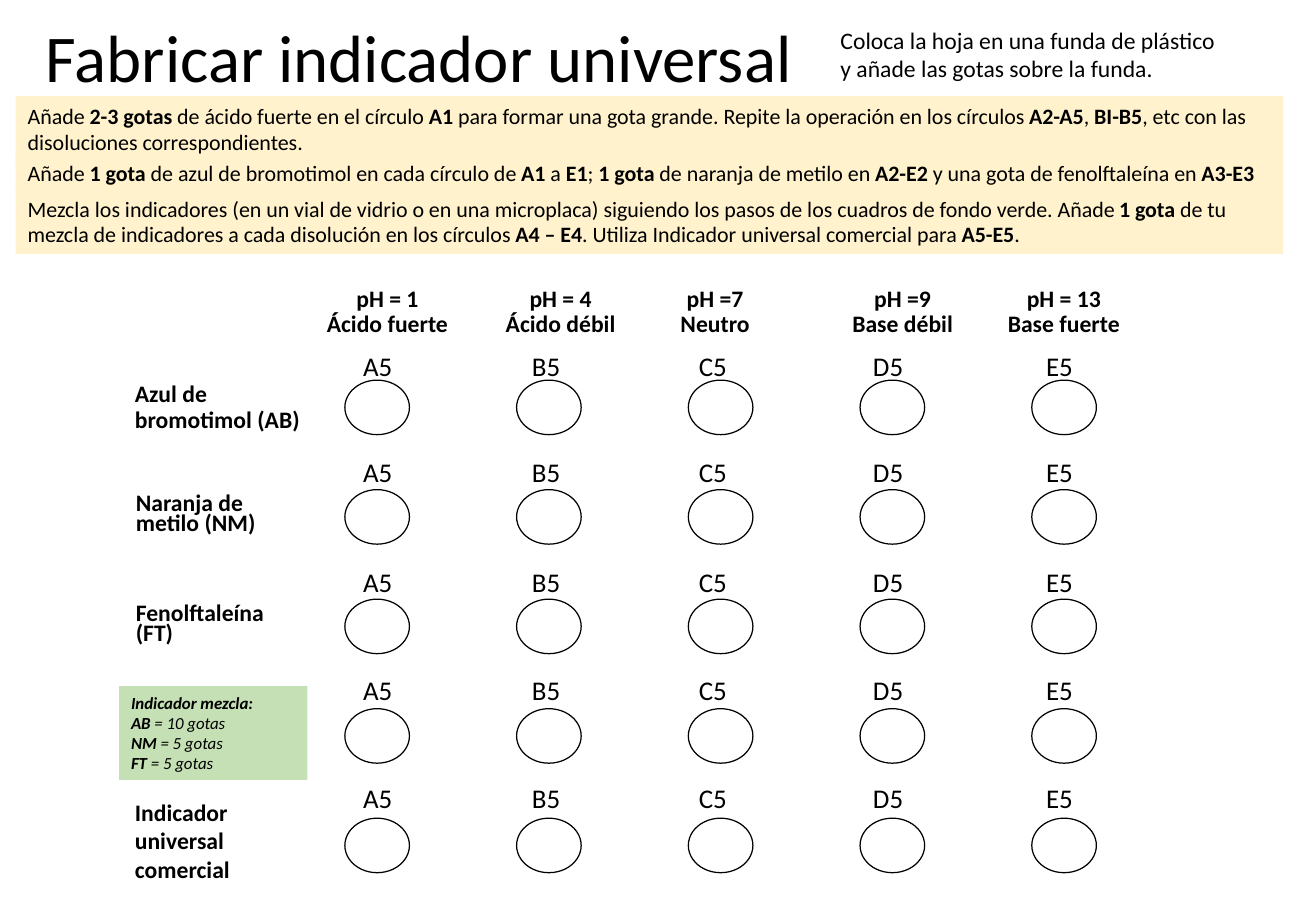
from dataclasses import dataclass
from typing import Optional, Union

from lxml import etree
from pptx import Presentation
from pptx import util as u
from pptx.dml.color import RGBColor
from pptx.enum import shapes, text
from pptx.oxml import ns

COLORS = {"ink": "000000", "paper": "FFFFFF", "cream": "FFF2CC", "green": "C5E0B4"}
FONT = "Calibri"


@dataclass(frozen=True)
class Block:
    x: float
    y: float
    w: float
    h: float
    paragraphs: tuple[str, ...]
    size: float = 14
    leading: Optional[Union[float, u.Pt]] = None
    space: float = 0
    fill: Optional[str] = None
    italic: bool = False
    align: text.PP_ALIGN = text.PP_ALIGN.LEFT
    anchor: text.MSO_ANCHOR = text.MSO_ANCHOR.TOP
    tabs: tuple[float, ...] = ()


def rgb(name: str) -> RGBColor:
    return RGBColor.from_string(COLORS[name])


def add_runs(p, marked: str, b: Block) -> None:
    for i, part in enumerate(marked.split("*")):
        for j, line in enumerate(part.split("\n")):
            if j:
                p.add_line_break()
            if line:
                r = p.add_run()
                r.text = line
                r.font.name, r.font.size = FONT, u.Pt(b.size)
                r.font.bold, r.font.italic = i % 2 == 1, b.italic
                r.font.color.rgb = rgb("ink")


def set_tabs(p, stops: tuple[float, ...]) -> None:
    tab_list = etree.SubElement(p._p.get_or_add_pPr(), ns.qn("a:tabLst"))
    for stop in stops:
        etree.SubElement(tab_list, ns.qn("a:tab"), pos=str(int(u.Cm(stop))), algn="l")


def draw_block(s, b: Block) -> None:
    box = u.Cm(b.x), u.Cm(b.y), u.Cm(b.w), u.Cm(b.h)
    if b.fill:
        sp = s.shapes.add_shape(shapes.MSO_SHAPE.RECTANGLE, *box)
        sp.shadow.inherit = False
        sp.fill.solid()
        sp.fill.fore_color.rgb = rgb(b.fill)
        sp.line.fill.background()
    else:
        sp = s.shapes.add_textbox(*box)
    tf = sp.text_frame
    tf.word_wrap = True
    tf.vertical_anchor = b.anchor
    for i, marked in enumerate(b.paragraphs):
        p = tf.add_paragraph() if i else tf.paragraphs[0]
        p.alignment = b.align
        p.space_before = p.space_after = u.Pt(b.space)
        if b.leading:
            p.line_spacing = b.leading
        if b.tabs:
            set_tabs(p, b.tabs)
        add_runs(p, marked, b)


def draw_circle(s, x: float, y: float) -> None:
    sp = s.shapes.add_shape(shapes.MSO_SHAPE.OVAL, u.Cm(x), u.Cm(y), u.Cm(1.35), u.Cm(1.14))
    sp.shadow.inherit = False
    sp.fill.solid()
    sp.fill.fore_color.rgb = rgb("paper")
    sp.line.color.rgb = rgb("ink")
    sp.line.width = u.Pt(0.75)


TITLES = [
    Block(0.71, 0.43, 17.07, 1.78, ("Fabricar indicador universal",), 39.6, 0.8,
          anchor=text.MSO_ANCHOR.MIDDLE),
    Block(17.32, 0.41, 8.64, 1.45,
          ("Coloca la hoja en una funda de plástico y añade las gotas sobre la funda.",)),
]

STEPS = [
    Block(0.33, 2.01, 26.49, 1.37, (
        "Añade *2-3 gotas *de ácido fuerte en el círculo *A1* para formar una gota grande. "
        "Repite la operación en los círculos *A2-A5*, *BI-B5*, etc con las disoluciones "
        "correspondientes.",), 13, fill="cream"),
    Block(0.33, 3.23, 26.49, 0.79, (
        "Añade *1 gota *de azul de bromotimol en cada círculo de *A1* a *E1*; *1 gota *de "
        "naranja de metilo en *A2-E2* y una gota de fenolftaleína en *A3-E3*",),
        13, u.Pt(15), 2, "cream"),
    Block(0.33, 3.99, 26.49, 1.32, (
        "Mezcla los indicadores (en un vial de vidrio o en una microplaca) siguiendo los pasos "
        "de los cuadros de fondo verde. Añade *1 gota *de tu mezcla de indicadores a cada "
        "disolución en los círculos *A4 – E4*. Utiliza Indicador universal comercial para "
        "*A5-E5*.",), 13, u.Pt(15), 2, "cream"),
]

ROW_NAMES = [
    Block(2.57, 7.87, 4.22, 1.32, ("*Azul de bromotimol (AB)*",), leading=u.Pt(15), space=2),
    Block(2.59, 10.24, 3.94, 1.14, ("*Naranja de metilo (NM)*",), leading=u.Pt(12), space=3),
    Block(2.59, 12.55, 3.94, 1.14, ("*Fenolftaleína (FT)*",), leading=u.Pt(12), space=3),
    Block(2.49, 14.35, 3.94, 1.96,
          ("*Indicador mezcla:*", "*AB *= 10 gotas", "*NM *= 5 gotas", "*FT *= 5 gotas"),
          10, fill="green", italic=True),
    Block(2.57, 16.56, 3.94, 2.06, ("*Indicador universal comercial*",)),
]

SOLUTIONS = [
    (8.1, "pH = 1", "Ácido fuerte"),
    (11.72, "pH = 4", "Ácido débil"),
    (14.95, "pH =7", "Neutro"),
    (18.87, "pH =9", "Base débil"),
    (22.24, "pH = 13", "Base fuerte"),
]
HEADER_W = 3.7
LABEL_TOPS = (7.34, 9.55, 11.84, 14.1, 16.36)
LABEL_TABS = (3.53, 7.02, 10.66, 14.28)
CIRCLE_X, CIRCLE_Y = 7.21, 7.95
CIRCLE_DX, CIRCLE_DY = 3.59, 2.29


def main() -> None:
    prs = Presentation()
    prs.slide_width, prs.slide_height = u.Cm(27.51), u.Cm(19.05)
    s = prs.slides.add_slide(prs.slide_layouts[6])

    for b in TITLES + STEPS:
        draw_block(s, b)
    for row in range(len(ROW_NAMES)):
        for col in range(len(SOLUTIONS)):
            draw_circle(s, CIRCLE_X + col * CIRCLE_DX, CIRCLE_Y + row * CIRCLE_DY)
    for b in ROW_NAMES:
        draw_block(s, b)
    for center, ph, name in SOLUTIONS:
        draw_block(s, Block(center - HEADER_W / 2, 5.87, HEADER_W, 1.32, (f"*{ph}\n{name}*",),
                            leading=u.Pt(15), space=2, align=text.PP_ALIGN.CENTER))
    for top in LABEL_TOPS:
        draw_block(s, Block(7.34, top, 17.68, 0.81, ("A5\tB5\tC5\tD5\tE5",), 16,
                            u.Pt(15), 2, tabs=LABEL_TABS))
    prs.save("out.pptx")


if __name__ == "__main__":
    main()
